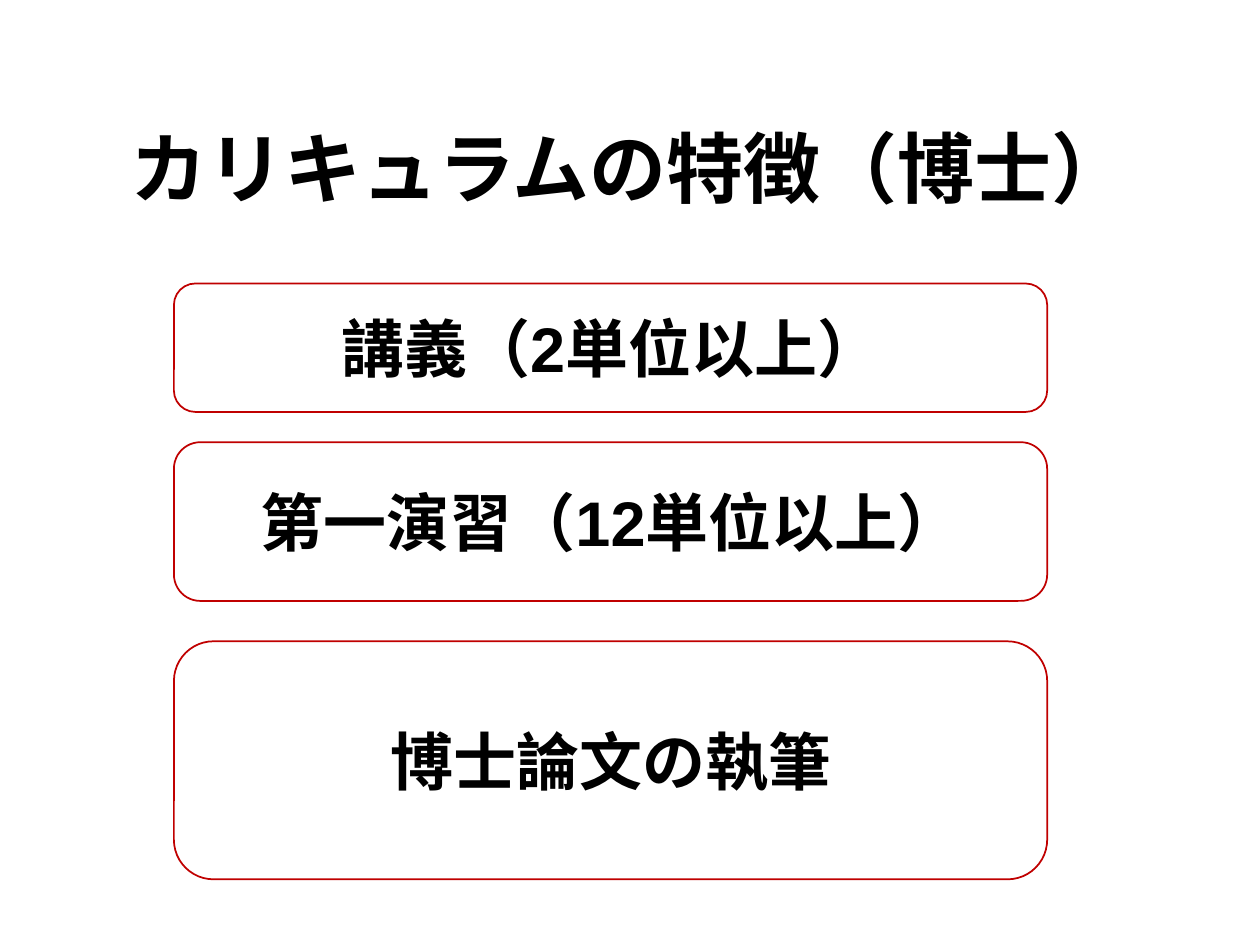
"""Build a slide on the features of the doctoral curriculum."""
import pptx
import pptx.dml.color
import pptx.enum.shapes
import pptx.enum.text
import pptx.util

Pt = pptx.util.Pt
COLORS = {"text": "000000", "panel": "FFFFFF", "border": "C00000"}
STAGE_LEFT, STAGE_WIDTH = 99.4, 499
STAGES = [
    ("講義（2単位以上）", 162, 73.4),
    ("第一演習（12単位以上）", 252.7, 90.7),
    ("博士論文の執筆", 366.5, 136),
]


def rgb(name):
    """Return the named colour."""
    return pptx.dml.color.RGBColor.from_string(COLORS[name])


def write(frame, wording, size):
    """Put centred bold wording in a text frame."""
    frame.word_wrap = True
    frame.vertical_anchor = pptx.enum.text.MSO_ANCHOR.MIDDLE
    line = frame.paragraphs[0]
    line.text = wording
    line.alignment = pptx.enum.text.PP_ALIGN.CENTER
    line.font.name = "Arial"
    line.font.size = Pt(size)
    line.font.bold = True
    line.font.color.rgb = rgb("text")


def add_heading(slide, wording):
    """Add the slide heading."""
    heading = slide.shapes.add_textbox(Pt(20), Pt(52), Pt(680), Pt(87))
    write(heading.text_frame, wording, 44)


def add_stage(slide, wording, top, height):
    """Add one rounded panel for a stage of the curriculum."""
    stage = slide.shapes.add_shape(
        pptx.enum.shapes.MSO_SHAPE.ROUNDED_RECTANGLE,
        Pt(STAGE_LEFT), Pt(top), Pt(STAGE_WIDTH), Pt(height))
    stage.shadow.inherit = False
    stage.fill.solid()
    stage.fill.fore_color.rgb = rgb("panel")
    stage.line.color.rgb = rgb("border")
    stage.line.width = Pt(1)
    write(stage.text_frame, wording, 36)


def main():
    """Build and save the presentation."""
    deck = pptx.Presentation()
    deck.slide_width, deck.slide_height = Pt(720), Pt(540)
    slide = deck.slides.add_slide(deck.slide_layouts[6])
    add_heading(slide, "カリキュラムの特徴（博士）")
    for wording, top, height in STAGES:
        add_stage(slide, wording, top, height)
    deck.save("out.pptx")


if __name__ == "__main__":
    main()
